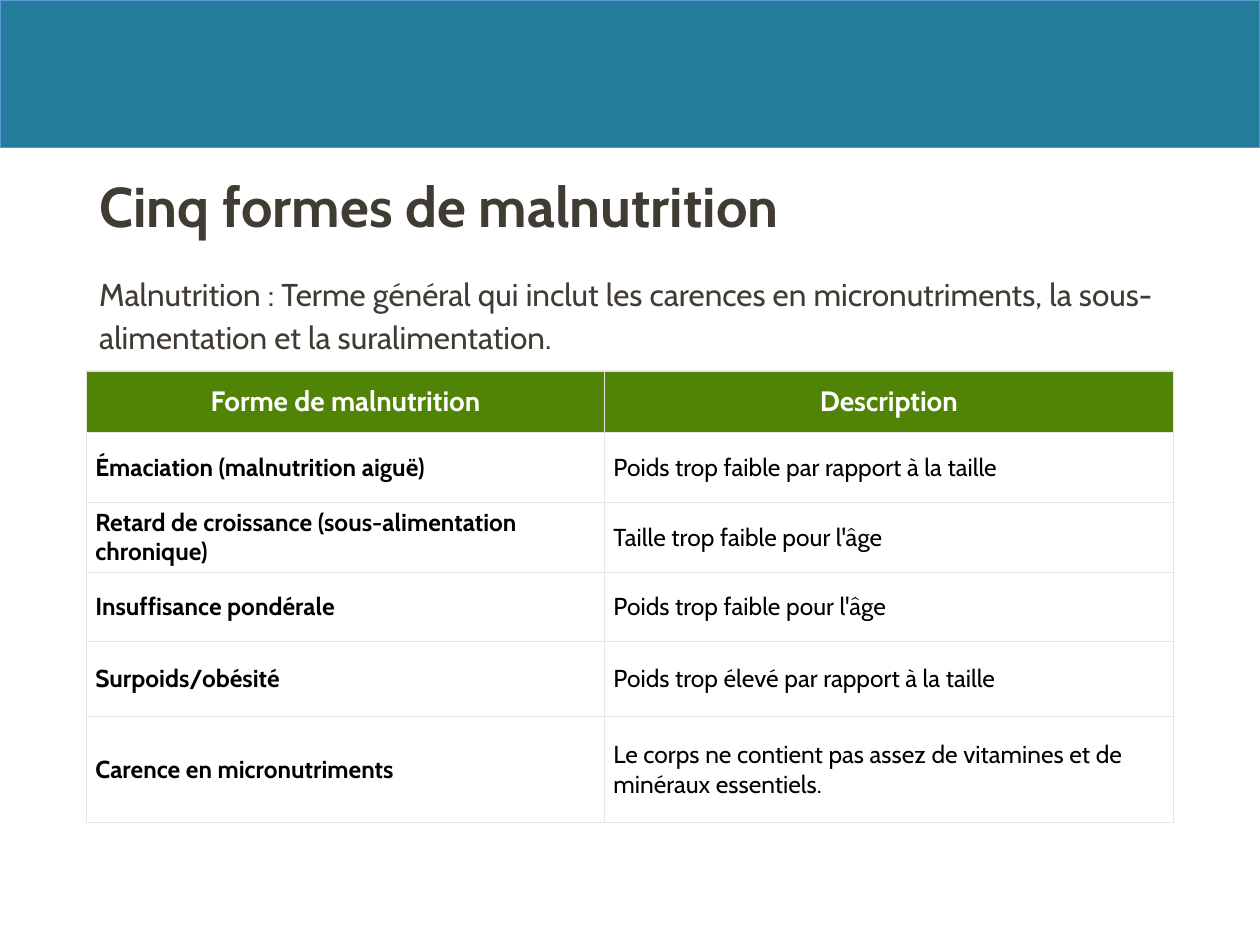
from dataclasses import dataclass

from lxml import etree
from pptx import Presentation
from pptx.dml.color import RGBColor
from pptx.enum.shapes import MSO_SHAPE
from pptx.enum.text import MSO_ANCHOR, MSO_AUTO_SIZE, PP_ALIGN
from pptx.oxml.ns import qn
from pptx.util import Pt

RECTANGLE = MSO_SHAPE.RECTANGLE
TOP, MIDDLE = MSO_ANCHOR.TOP, MSO_ANCHOR.MIDDLE
LEFT, CENTER = PP_ALIGN.LEFT, PP_ALIGN.CENTER
NO_AUTOFIT = MSO_AUTO_SIZE.NONE


@dataclass(frozen=True)
class Theme:
    font: str = "Cabin"
    band: str = "237C9A"
    band_edge: str = "5B9BD5"
    ink: str = "403B33"
    header: str = "518307"
    border: str = "E7E6E6"
    white: str = "FFFFFF"
    black: str = "000000"
    title_size: float = 32
    body_size: float = 18
    header_size: float = 16
    cell_size: float = 14


THEME = Theme()
SLIDE_WIDTH, SLIDE_HEIGHT = 720, 540
MARGIN = 49.5
CONTENT_WIDTH = SLIDE_WIDTH - 2 * MARGIN

TITLE = "Cinq formes de malnutrition"
DEFINITION = ("Malnutrition\u00a0: Terme général qui inclut les carences en "
              "micronutriments, la sous-alimentation et la suralimentation.")
HEADINGS = ("Forme de malnutrition", "Description")
FORMS = (
    ("Émaciation (malnutrition aiguë)", "Poids trop faible par rapport à la taille"),
    ("Retard de croissance (sous-alimentation chronique)", "Taille trop faible pour l'âge"),
    ("Insuffisance pondérale", "Poids trop faible pour l'âge"),
    ("Surpoids/obésité", "Poids trop élevé par rapport à la taille"),
    ("Carence en micronutriments",
     "Le corps ne contient pas assez de vitamines et de minéraux essentiels."),
)
COLUMN_WIDTHS = (296, CONTENT_WIDTH - 296)
ROW_HEIGHTS = (35, 40, 39.5, 39.5, 43, 60.5)


def write(frame, text, *, size, color, bold=False, align=LEFT, spacing=1.0, after=0):
    """Fill a text frame with one formatted paragraph."""
    paragraph = frame.paragraphs[0]
    paragraph.text = text
    paragraph.alignment = align
    paragraph.line_spacing = spacing
    paragraph.space_before, paragraph.space_after = Pt(0), Pt(after)
    font = paragraph.runs[0].font
    font.name, font.size, font.bold = THEME.font, Pt(size), bold
    font.color.rgb = RGBColor.from_string(color)


def add_band(slide, height):
    band = slide.shapes.add_shape(RECTANGLE, 0, 0, Pt(SLIDE_WIDTH), Pt(height))
    band.shadow.inherit = False
    band.fill.solid()
    band.fill.fore_color.rgb = RGBColor.from_string(THEME.band)
    band.line.color.rgb = RGBColor.from_string(THEME.band_edge)
    band.line.width = Pt(0.5)


def fill_placeholder(placeholder, text, top, height, **text_format):
    placeholder.left, placeholder.top = Pt(MARGIN), Pt(top)
    placeholder.width, placeholder.height = Pt(CONTENT_WIDTH), Pt(height)
    frame = placeholder.text_frame
    frame.word_wrap = True
    frame.auto_size = NO_AUTOFIT
    frame.vertical_anchor = TOP
    write(frame, text, **text_format)


def remove_bullet(paragraph):
    properties = paragraph._p.get_or_add_pPr()
    properties.set("marL", "0")
    properties.set("indent", "0")
    etree.SubElement(properties, qn("a:buNone"))


def add_borders(cell):
    """Draw all four edges; edge elements must precede the cell fill."""
    properties = cell._tc.get_or_add_tcPr()
    for position, edge in enumerate(("a:lnL", "a:lnR", "a:lnT", "a:lnB")):
        line = etree.Element(qn(edge), w=str(Pt(0.75)))
        fill = etree.SubElement(line, qn("a:solidFill"))
        etree.SubElement(fill, qn("a:srgbClr"), val=THEME.border)
        properties.insert(position, line)


def format_cell(cell, text, fill, **text_format):
    cell.margin_left = cell.margin_right = Pt(5)
    cell.margin_top = cell.margin_bottom = Pt(3)
    cell.vertical_anchor = MIDDLE
    cell.fill.solid()
    cell.fill.fore_color.rgb = RGBColor.from_string(fill)
    add_borders(cell)
    write(cell.text_frame, text, **text_format)


def add_forms_table(slide, top):
    table = slide.shapes.add_table(
        len(ROW_HEIGHTS), len(COLUMN_WIDTHS), Pt(MARGIN), Pt(top),
        Pt(CONTENT_WIDTH), Pt(sum(ROW_HEIGHTS))).table
    table.horz_banding = False
    for column, width in zip(table.columns, COLUMN_WIDTHS):
        column.width = Pt(width)
    for row, height in zip(table.rows, ROW_HEIGHTS):
        row.height = Pt(height)

    # Header row
    for column, heading in enumerate(HEADINGS):
        format_cell(table.cell(0, column), heading, THEME.header, size=THEME.header_size,
                    color=THEME.white, bold=True, align=CENTER)
    # One row per form, its name in bold
    for row, form in enumerate(FORMS, start=1):
        for column, text in enumerate(form):
            format_cell(table.cell(row, column), text, THEME.white, size=THEME.cell_size,
                        color=THEME.black, bold=column == 0)


def main():
    presentation = Presentation()
    presentation.slide_width, presentation.slide_height = Pt(SLIDE_WIDTH), Pt(SLIDE_HEIGHT)
    slide = presentation.slides.add_slide(presentation.slide_layouts[1])

    # Top band
    add_band(slide, 84.5)

    # Title and definition
    fill_placeholder(slide.shapes.title, TITLE, 98.5, 74, size=THEME.title_size,
                     color=THEME.ink, bold=True, spacing=0.9)
    definition = slide.placeholders[1]
    fill_placeholder(definition, DEFINITION, 150.5, 318, size=THEME.body_size,
                     color=THEME.ink, spacing=1.14, after=6)
    remove_bullet(definition.text_frame.paragraphs[0])

    # Table of the five forms
    add_forms_table(slide, 212)

    presentation.save("out.pptx")


if __name__ == "__main__":
    main()
